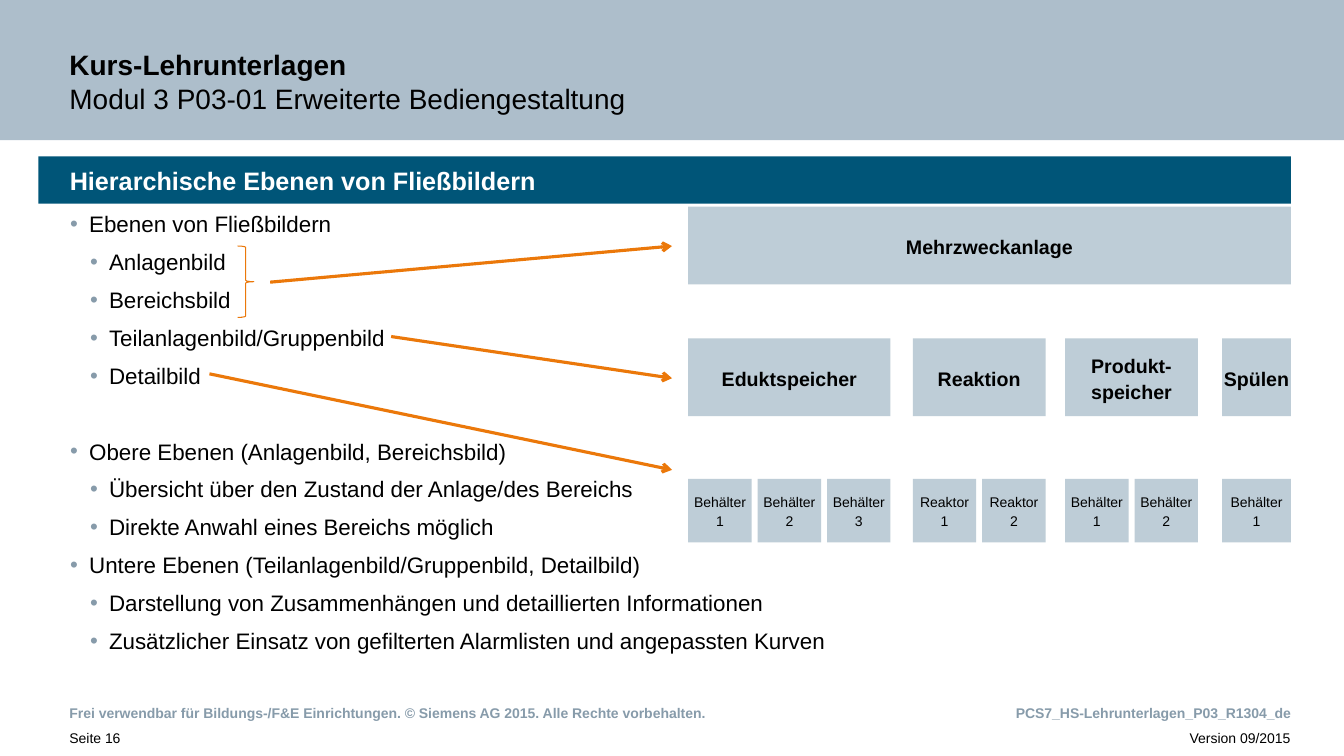
import pptx
import pptx.util
import pptx.dml.color
import pptx.enum.shapes
import pptx.enum.text
import pptx.oxml.ns
from lxml import etree

Cm = pptx.util.Cm
Pt = pptx.util.Pt
qn = pptx.oxml.ns.qn
SHAPE = pptx.enum.shapes.MSO_SHAPE
ALIGN = pptx.enum.text.PP_ALIGN
ANCHOR = pptx.enum.text.MSO_ANCHOR

COLORS = {
    "header": "ADBECB",
    "banner": "005578",
    "box": "BECDD7",
    "accent": "EB780A",
    "muted": "879BAA",
    "black": "000000",
    "white": "FFFFFF",
}
WIDTH, HEIGHT = 33.88, 19.05
LEFT, RIGHT = 1.75, 32.54
PLANT_LEFT, PLANT_TOP = 17.35, 5.21
UNIT_TOP, UNIT_HEIGHT = 8.53, 1.96
TANK_TOP, TANK_HEIGHT, TANK_WIDTH, TANK_GAP = 12.07, 1.6, 1.6, 0.15

UNITS = [
    ("Eduktspeicher", 17.35, TANK_WIDTH, 0.3, "Behälter", 3),
    ("Reaktion", 23.01, TANK_WIDTH, 0.3, "Reaktor", 2),
    ("Produkt-speicher", 26.85, TANK_WIDTH, 0.3, "Behälter", 2),
    ("Spülen", 30.81, 1.73, 0, "Behälter", 1),
]
BULLETS = [
    (1, "Ebenen von Fließbildern", 0),
    (2, "Anlagenbild", 6),
    (2, "Bereichsbild", 6),
    (2, "Teilanlagenbild/Gruppenbild", 6),
    (2, "Detailbild", 6),
    (1, "Obere Ebenen (Anlagenbild, Bereichsbild)", 33),
    (2, "Übersicht über den Zustand der Anlage/des Bereichs", 6),
    (2, "Direkte Anwahl eines Bereichs möglich", 6),
    (1, "Untere Ebenen (Teilanlagenbild/Gruppenbild, Detailbild)", 6),
    (2, "Darstellung von Zusammenhängen und detaillierten Informationen", 6),
    (2, "Zusätzlicher Einsatz von gefilterten Alarmlisten und angepassten Kurven", 6),
]
ARROWS = [
    (6.81, 7.11, 16.94, 6.2),
    (9.86, 8.48, 16.94, 9.53),
    (5.28, 9.42, 16.94, 11.84),
]


def rgb(name):
    return pptx.dml.color.RGBColor.from_string(COLORS[name])


def add_text(tf, text, size=16, bold=False, color="black", align=ALIGN.LEFT,
             spacing=1.0, before=0, level=0):
    for line in text.split("\n"):
        p = tf.add_paragraph() if tf.paragraphs[0].runs else tf.paragraphs[0]
        if level:
            add_bullet(p, level)
        p.alignment = align
        p.line_spacing = spacing
        p.space_before = Pt(before)
        r = p.add_run()
        r.text = line
        r.font.name = "Arial"
        r.font.size = Pt(size)
        r.font.bold = bold
        r.font.color.rgb = rgb(color)


def add_bullet(p, level):
    p.level = level - 1
    pPr = p._p.get_or_add_pPr()
    pPr.set("marL", str(Cm(0.5 * level)))
    pPr.set("indent", str(Cm(-0.48)))
    buClr = etree.SubElement(pPr, qn("a:buClr"))
    etree.SubElement(buClr, qn("a:srgbClr"), val=COLORS["muted"])
    etree.SubElement(pPr, qn("a:buFont"), typeface="Arial")
    etree.SubElement(pPr, qn("a:buChar"), char="•")


def set_frame(tf, insets, anchor, wrap=True):
    tf.margin_left, tf.margin_top, tf.margin_right, tf.margin_bottom = map(Cm, insets)
    tf.vertical_anchor = anchor
    tf.word_wrap = wrap
    return tf


def add_box(s, x, y, w, h, insets=(0, 0, 0, 0), anchor=ANCHOR.TOP, wrap=True):
    sp = s.shapes.add_textbox(Cm(x), Cm(y), Cm(w), Cm(h))
    return set_frame(sp.text_frame, insets, anchor, wrap)


def add_shape(s, x, y, w, h, fill, kind=SHAPE.RECTANGLE, line=None,
              insets=(0, 0, 0, 0)):
    sp = s.shapes.add_shape(kind, Cm(x), Cm(y), Cm(w), Cm(h))
    sp.shadow.inherit = False
    sp.fill.solid()
    sp.fill.fore_color.rgb = rgb(fill)
    if line:
        sp.line.color.rgb = rgb(line)
        sp.line.width = Pt(0.75)
    else:
        sp.line.fill.background()
    return set_frame(sp.text_frame, insets, ANCHOR.MIDDLE)


def add_block(s, text, x, y, w, h, side=0.3, size=14, bold=True):
    tf = add_shape(s, x, y, w, h, "box", insets=(side, 0.15, side, 0.15))
    add_text(tf, text, size=size, bold=bold, align=ALIGN.CENTER, spacing=1.1)


def add_arrow(s, x1, y1, x2, y2):
    cn = s.shapes.add_connector(pptx.enum.shapes.MSO_CONNECTOR.STRAIGHT,
                                Cm(x1), Cm(y1), Cm(x2), Cm(y2))
    cn.line.color.rgb = rgb("accent")
    cn.line.width = Pt(2.25)
    etree.SubElement(cn.line._get_or_add_ln(), qn("a:tailEnd"), type="arrow")
    etree.SubElement(cn._element.spPr, qn("a:effectLst"))


def add_unit(s, name, x, tank_width, side, tank, count):
    pitch = tank_width + TANK_GAP
    add_block(s, name, x, UNIT_TOP, count * pitch - TANK_GAP, UNIT_HEIGHT, side)
    for i in range(count):
        add_block(s, f"{tank}\n{i + 1}", x + i * pitch, TANK_TOP, tank_width,
                  TANK_HEIGHT, side=0, size=10, bold=False)


def add_header(s):
    add_shape(s, 0, 0, WIDTH, 3.53, "header")
    tf = add_box(s, 0, 0, WIDTH, 3.53, (LEFT, 1.09, 5.89, 0.66), ANCHOR.BOTTOM)
    add_text(tf, "Kurs-Lehrunterlagen", size=20, bold=True)
    add_text(tf, "Modul 3 P03-01 Erweiterte Bediengestaltung", size=20)


def add_footer(s):
    tf = add_box(s, 0, 17.12, WIDTH, 1.19, (LEFT, 0.48, 8.92, 0), ANCHOR.MIDDLE)
    add_text(tf, "Frei verwendbar für Bildungs-/F&E Einrichtungen. "
             "© Siemens AG 2015. Alle Rechte vorbehalten.",
             size=10, bold=True, color="muted")
    tf = add_box(s, 0, 18.34, 4.9, 0.71, (LEFT, 0, 0, 0.33))
    add_text(tf, "Seite 16", size=10, spacing=1.1)
    tf = add_box(s, 10.52, 18.34, 23.36, 0.71, (0, 0, 1.35, 0.33))
    add_text(tf, "Version 09/2015", size=10, align=ALIGN.RIGHT, spacing=1.1)
    tf = add_box(s, 25.55, 17.7, 6.99, 0.43, wrap=False)
    add_text(tf, "PCS7_HS-Lehrunterlagen_P03_R1304_de", size=10, bold=True,
             color="muted", align=ALIGN.RIGHT, spacing=1.1)


def main():
    prs = pptx.Presentation()
    prs.slide_width, prs.slide_height = Cm(WIDTH), Cm(HEIGHT)
    s = prs.slides.add_slide(prs.slide_layouts[6])
    add_header(s)
    add_footer(s)
    tf = add_box(s, LEFT, 5.23, 22.81, 11.89)
    for level, text, before in BULLETS:
        add_text(tf, text, spacing=1.1, before=before, level=level)
    for arrow in ARROWS:
        add_arrow(s, *arrow)
    add_shape(s, 5.99, 6.2, 0.41, 1.8, "white", SHAPE.RIGHT_BRACE, "accent")
    tf = add_shape(s, 0.97, 3.94, 31.57, 1.19, "banner", insets=(0.79, 0, 0.2, 0))
    add_text(tf, "Hierarchische Ebenen von Fließbildern", size=18, bold=True,
             color="white")
    add_block(s, "Mehrzweckanlage", PLANT_LEFT, PLANT_TOP, RIGHT - PLANT_LEFT,
              UNIT_HEIGHT)
    for unit in UNITS:
        add_unit(s, *unit)
    prs.save("out.pptx")


if __name__ == "__main__":
    main()
